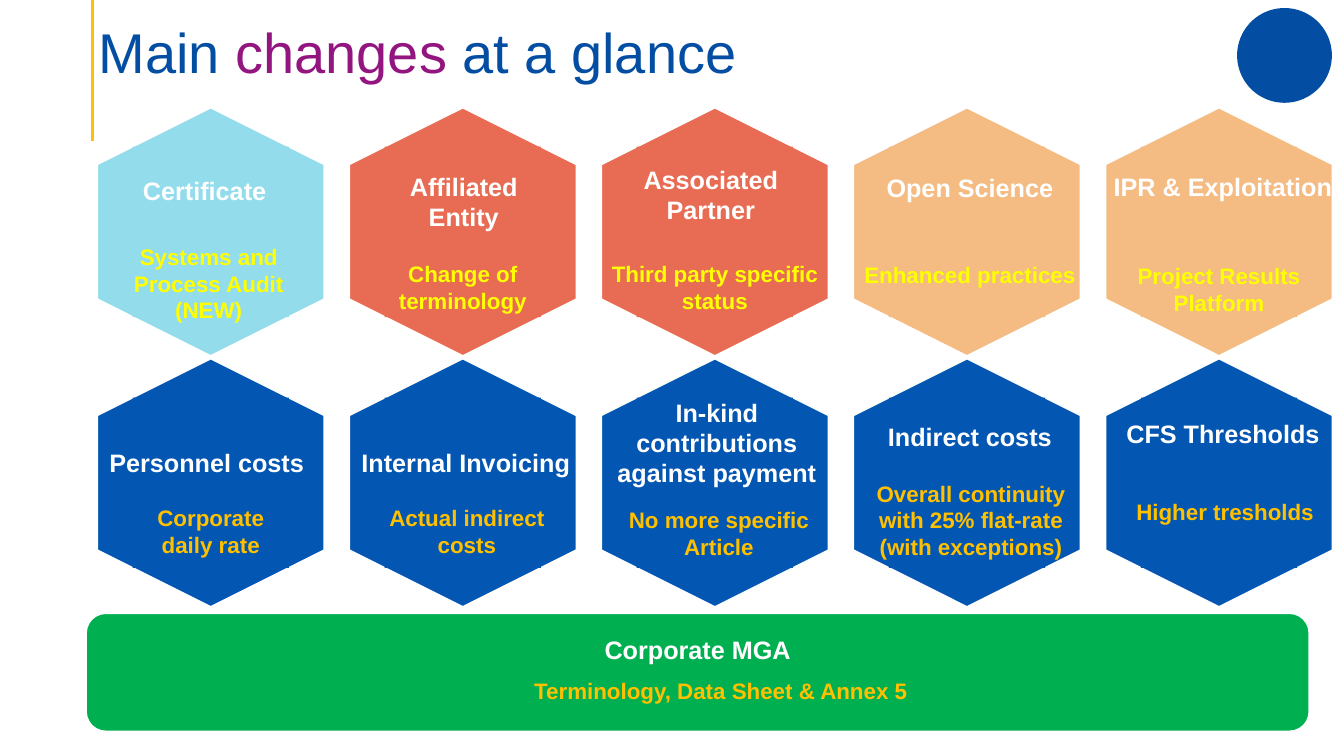
"""Build the slide "Main changes at a glance" with two rows of hexagons."""
from dataclasses import dataclass

from lxml.etree import SubElement
from pptx import Presentation
from pptx.dml.color import RGBColor
from pptx.enum.shapes import MSO_CONNECTOR, MSO_SHAPE
from pptx.enum.text import MSO_ANCHOR, PP_ALIGN
from pptx.oxml.ns import qn
from pptx.util import Inches, Pt

WHITE = RGBColor(0xFF, 0xFF, 0xFF)
YELLOW = RGBColor(0xFF, 0xFF, 0x00)
AMBER = RGBColor(0xFF, 0xC0, 0x00)
NAVY = RGBColor(0x03, 0x4E, 0xA2)
PURPLE = RGBColor(0x93, 0x16, 0x80)
BLUE = RGBColor(0x03, 0x56, 0xB1)
SKY = RGBColor(0x93, 0xDC, 0xEB)
CORAL = RGBColor(0xE7, 0x6C, 0x53)
PEACH = RGBColor(0xF4, 0xBB, 0x82)
GREEN = RGBColor(0x00, 0xB0, 0x50)

FONT = "Arial"
FIRST_COLUMN, COLUMN_PITCH = 2.09, 2.5
ROW_CENTRES = (2.3, 4.79)
ROW_CAPTION_COLORS = (YELLOW, AMBER)
HEXAGON_LENGTH, HEXAGON_WIDTH = 2.46, 2.25
CORE_WIDTH, CORE_HEIGHT = 1.55, 1.69
HEADING_WIDTH = 2.46
NARROW, WIDE = 2.25, 2.48


@dataclass
class Change:
    """One hexagon: texts with their top edges and shifts from the column centre."""
    fill: RGBColor
    heading: str
    heading_top: float
    heading_shift: float
    caption: str
    caption_top: float
    caption_shift: float
    caption_width: float = NARROW


CHANGES = (
    (
        Change(SKY, "Certificate", 1.69, -0.06,
               "Systems and Process Audit (NEW)", 2.36, -0.02),
        Change(CORAL, "Affiliated\nEntity", 1.65, 0.01,
               "Change of terminology", 2.53, 0, WIDE),
        Change(CORAL, "Associated Partner", 1.58, -0.04,
               "Third party specific status", 2.53, 0, WIDE),
        Change(PEACH, "Open Science", 1.66, 0.03,
               "Enhanced practices", 2.54, 0.03, WIDE),
        Change(PEACH, "IPR & Exploitation", 1.65, 0.04,
               "Project Results Platform", 2.55, 0, WIDE),
    ),
    (
        Change(BLUE, "Personnel costs", 4.39, -0.04,
               "Corporate\ndaily rate", 4.95, 0),
        Change(BLUE, "Internal Invoicing", 4.39, 0.03,
               "Actual indirect costs", 4.95, 0.04),
        Change(BLUE, "In-kind contributions against payment", 3.89, 0.02,
               "No more specific Article", 4.97, 0.04),
        Change(BLUE, "Indirect costs", 4.13, 0.03,
               "Overall continuity with 25% flat-rate\n(with exceptions)", 4.71, 0.04),
        Change(BLUE, "CFS Thresholds", 4.1, 0.04,
               "Higher tresholds", 4.89, 0.06),
    ),
)


def add_filled_shape(slide, kind, center, size, fill, outline=None):
    """Add a flat preset shape around a centre point."""
    (x, y), (width, height) = center, size
    shape = slide.shapes.add_shape(kind, Inches(x - width / 2), Inches(y - height / 2),
                                   Inches(width), Inches(height))
    shape.shadow.inherit = False
    shape.fill.solid()
    shape.fill.fore_color.rgb = fill
    if outline is None:
        shape.line.fill.background()
    else:
        shape.line.color.rgb = outline
        shape.line.width = Pt(1)
    return shape


def add_hexagon(slide, center, fill):
    """Add an upright hexagon with its rectangular core."""
    hexagon = add_filled_shape(slide, MSO_SHAPE.HEXAGON, center,
                               (HEXAGON_LENGTH, HEXAGON_WIDTH), fill, WHITE)
    hexagon.adjustments[0] = 0.25
    hexagon.rotation = 90
    add_filled_shape(slide, MSO_SHAPE.RECTANGLE, center, (CORE_WIDTH, CORE_HEIGHT), fill)


def style_run(run, size, color, bold=False):
    """Set the font of a run."""
    run.font.name = FONT
    run.font.size = Pt(size)
    run.font.bold = bold
    run.font.color.rgb = color


def add_label(slide, text, *, center, top, width, size, color):
    """Add a bold centred text box with one paragraph for each line."""
    lines = text.split("\n")
    box = slide.shapes.add_textbox(Inches(center - width / 2), Inches(top), Inches(width),
                                   Inches(0.1 + len(lines) * size / 60))
    frame = box.text_frame
    frame.word_wrap = True
    for index, line in enumerate(lines):
        paragraph = frame.add_paragraph() if index else frame.paragraphs[0]
        paragraph.alignment = PP_ALIGN.CENTER
        run = paragraph.add_run()
        run.text = line
        style_run(run, size, color, bold=True)


def add_change(slide, change, center, caption_color):
    """Add one hexagon with its heading and caption."""
    add_hexagon(slide, center, change.fill)
    add_label(slide, change.heading, center=center[0] + change.heading_shift,
              top=change.heading_top, width=HEADING_WIDTH, size=18, color=WHITE)
    add_label(slide, change.caption, center=center[0] + change.caption_shift,
              top=change.caption_top, width=change.caption_width, size=16,
              color=caption_color)


def add_title(slide):
    """Add the three-part title and the accent line beside it."""
    line = slide.shapes.add_connector(MSO_CONNECTOR.STRAIGHT, Inches(0.92), 0,
                                      Inches(0.92), Inches(1.4))
    line.line.color.rgb = AMBER
    line.line.width = Pt(2.25)
    SubElement(line.element.spPr, qn("a:effectLst"))
    box = slide.shapes.add_textbox(Inches(0.88), Inches(-0.01), Inches(11.5), Inches(0.86))
    frame = box.text_frame
    frame.word_wrap = True
    frame.vertical_anchor = MSO_ANCHOR.BOTTOM
    frame.margin_bottom = 0
    paragraph = frame.paragraphs[0]
    paragraph.line_spacing = 0.9
    for text, color in (("Main ", NAVY), ("changes", PURPLE), (" at a glance", NAVY)):
        run = paragraph.add_run()
        run.text = text
        style_run(run, 40, color)


def add_footer_bar(slide):
    """Add the rounded bar under the hexagons."""
    center = (6.92, 6.67)
    add_filled_shape(slide, MSO_SHAPE.ROUNDED_RECTANGLE, center, (12.13, 1.17), GREEN, WHITE)
    add_filled_shape(slide, MSO_SHAPE.RECTANGLE, center, (11.95, 1.06), GREEN)
    add_label(slide, "Corporate MGA", center=center[0], top=6.24, width=2.8,
              size=18, color=WHITE)
    add_label(slide, "Terminology, Data Sheet & Annex 5", center=7.15, top=6.67,
              width=5.46, size=16, color=AMBER)


def main():
    """Build and save the presentation."""
    presentation = Presentation()
    presentation.slide_width = Inches(13.33)
    presentation.slide_height = Inches(7.5)
    slide = presentation.slides.add_slide(presentation.slide_layouts[6])
    add_title(slide)
    for row, y, caption_color in zip(CHANGES, ROW_CENTRES, ROW_CAPTION_COLORS):
        for column, change in enumerate(row):
            add_change(slide, change, (FIRST_COLUMN + column * COLUMN_PITCH, y), caption_color)
    add_footer_bar(slide)
    add_filled_shape(slide, MSO_SHAPE.OVAL, (12.74, 0.55), (0.94, 0.94), NAVY)
    presentation.save("out.pptx")


if __name__ == "__main__":
    main()
